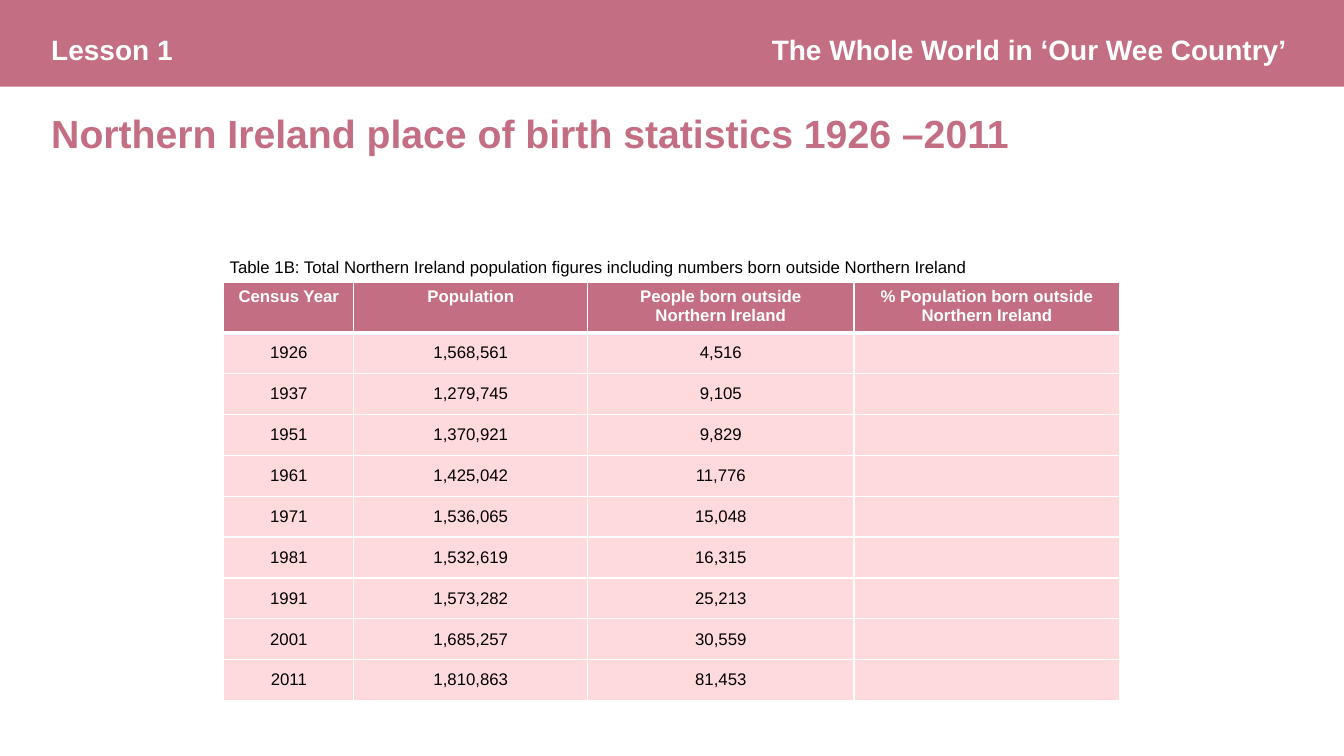
from lxml.etree import SubElement
from pptx import Presentation
from pptx.dml.color import RGBColor
from pptx.enum.shapes import MSO_SHAPE
from pptx.enum.text import MSO_ANCHOR, MSO_AUTO_SIZE, PP_ALIGN
from pptx.oxml.ns import qn
from pptx.util import Inches, Pt


def color(code):
    return RGBColor.from_string(code)


def style(frame, size, code, bold, align):
    for para in frame.paragraphs:
        para.alignment = align
        para.font.name = "Arial"
        para.font.size = Pt(size)
        para.font.bold = bold
        para.font.color.rgb = color(code)


ROSE, PINK, WHITE, BLACK = "C46E83", "FFDADD", "FFFFFF", "000000"
LEFT, RIGHT = PP_ALIGN.LEFT, PP_ALIGN.RIGHT

deck = Presentation()
deck.slide_width = Inches(13.33)
deck.slide_height = Inches(7.5)
slide = deck.slides.add_slide(deck.slide_layouts[6])

banner = slide.shapes.add_shape(MSO_SHAPE.RECTANGLE, 0, 0, deck.slide_width, Inches(0.86))
banner.shadow.inherit = False
banner.fill.solid()
banner.fill.fore_color.rgb = color(ROSE)
banner.line.fill.background()

labels = [
    ("Lesson 1", 0.41, 0.27, 1.73, 0.44, 20, WHITE, True, LEFT),
    ("The Whole World in ‘Our Wee Country’", 5.94, 0.27, 6.92, 0.44, 20, WHITE, True, RIGHT),
    ("Table 1B: Total Northern Ireland population figures including numbers "
     "born outside Northern Ireland", 2.18, 2.5, 8.05, 0.3, 12, BLACK, False, LEFT),
]
for text, x, y, w, h, size, code, bold, align in labels:
    frame = slide.shapes.add_textbox(Inches(x), Inches(y), Inches(w), Inches(h)).text_frame
    frame.word_wrap = True
    frame.auto_size = MSO_AUTO_SIZE.SHAPE_TO_FIT_TEXT
    frame.text = text
    style(frame, size, code, bold, align)

title = slide.shapes.add_textbox(Inches(0.41), Inches(1.11), Inches(10.15), Inches(0.51)).text_frame
title.word_wrap = True
title.vertical_anchor = MSO_ANCHOR.MIDDLE
title.text = "Northern Ireland place of birth statistics 1926 –2011"
title.paragraphs[0].line_spacing = 0.8
style(title, 28, ROSE, True, LEFT)

rows = [
    ("Census Year", "Population", "People born outside\nNorthern Ireland",
     "% Population born outside Northern Ireland"),
    ("1926", "1,568,561", "4,516", ""),
    ("1937", "1,279,745", "9,105", ""),
    ("1951", "1,370,921", "9,829", ""),
    ("1961", "1,425,042", "11,776", ""),
    ("1971", "1,536,065", "15,048", ""),
    ("1981", "1,532,619", "16,315", ""),
    ("1991", "1,573,282", "25,213", ""),
    ("2001", "1,685,257", "30,559", ""),
    ("2011", "1,810,863", "81,453", ""),
]
widths = [1.29, 2.32, 2.64, 2.64]
head, body = 0.49, 3.65
table = slide.shapes.add_table(len(rows), len(widths), Inches(2.22), Inches(2.8),
                               Inches(sum(widths)), Inches(head + body)).table
for column, width in zip(table.columns, widths):
    column.width = Inches(width)

for i, row in enumerate(rows):
    top = i == 0
    table.rows[i].height = Inches(head if top else body / (len(rows) - 1))
    for j, text in enumerate(row):
        cell = table.cell(i, j)
        cell.text = text
        cell.vertical_anchor = MSO_ANCHOR.TOP if top else MSO_ANCHOR.MIDDLE
        style(cell.text_frame, 12, WHITE if top else BLACK, top, PP_ALIGN.CENTER)
        props = cell._tc.get_or_add_tcPr()
        for side in "LRTB":
            thick = (top and side == "B") or (i == 1 and side == "T")
            edge = SubElement(props, qn("a:ln" + side), w=str(Pt(3 if thick else 1)))
            SubElement(SubElement(edge, qn("a:solidFill")), qn("a:srgbClr"), val=WHITE)
        cell.fill.solid()
        cell.fill.fore_color.rgb = color(ROSE if top else PINK)

deck.save("out.pptx")
